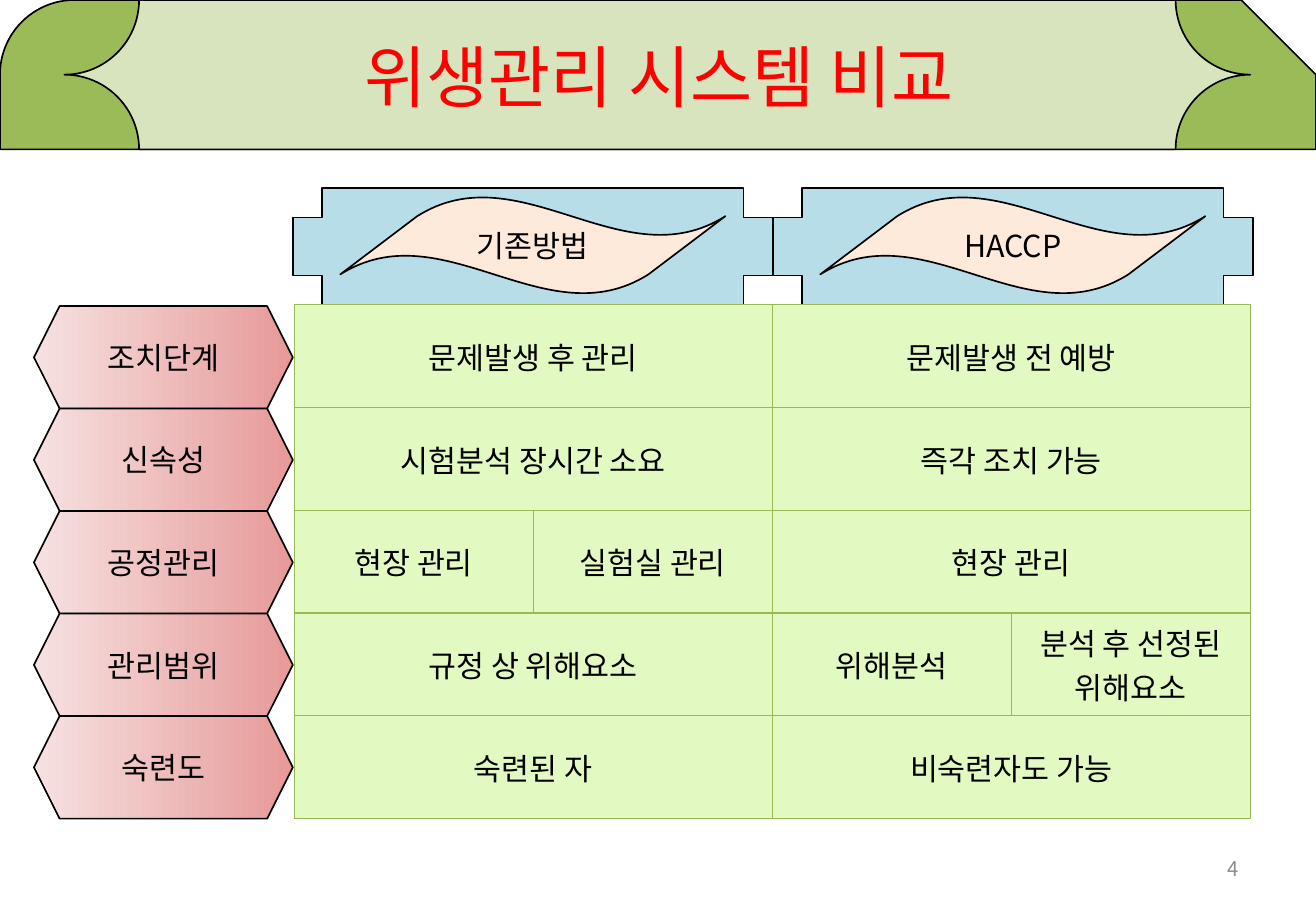
from lxml import etree
from pptx import Presentation
from pptx.dml.color import RGBColor
from pptx.enum import shapes, text
from pptx.oxml import ns
from pptx.util import Inches, Pt

FONT = "Noto Sans CJK KR"
MSO = shapes.MSO_SHAPE
HEADS = ["기존방법", "HACCP"]
LABELS = ["조치단계", "신속성", "공정관리", "관리범위", "숙련도"]
ROWS = [
    ["문제발생 후 관리", None, "문제발생 전 예방", None],
    ["시험분석 장시간 소요", None, "즉각 조치 가능", None],
    ["현장 관리", "실험실 관리", "현장 관리", None],
    ["규정 상 위해요소", None, "위해분석", "분석 후 선정된 위해요소"],
    ["숙련된 자", None, "비숙련자도 가능", None],
]


def rgb(value):
    """Return the colour for a hex string."""
    return RGBColor.from_string(value)


def write(tf, content, size=18, color="000000", align="CENTER"):
    """Put one formatted, vertically centred paragraph in a text frame."""
    tf.word_wrap = True
    tf.vertical_anchor = text.MSO_ANCHOR.MIDDLE
    p = tf.paragraphs[0]
    p.alignment = getattr(text.PP_ALIGN, align)
    r = p.add_run()
    r.text = content
    r.font.size = Pt(size)
    r.font.color.rgb = rgb(color)
    r.font.name = FONT
    ea = etree.SubElement(r._r.get_or_add_rPr(), ns.qn("a:ea"))
    ea.set("typeface", FONT)


def add_outlined(s, kind, box, fill=None, adj=()):
    """Add a preset shape with a thin black outline."""
    sp = s.shapes.add_shape(kind, *map(Inches, box))
    sp.shadow.inherit = False
    for i, value in enumerate(adj):
        sp.adjustments[i] = value
    sp.line.color.rgb = rgb("000000")
    sp.line.width = Pt(1)
    if fill:
        sp.fill.solid()
        sp.fill.fore_color.rgb = rgb(fill)
    return sp


def add_banner(s, x, y, w, h):
    """Draw the green banner and set the slide title over it."""
    add_outlined(s, MSO.SNIP_ROUND_RECTANGLE, (x, y, w, h), "9BBB59", (0.5, 0.5))
    add_outlined(s, MSO.PLAQUE, (x + 0.53, y, w - 1.07, h), "D7E4BD", (0.5,))
    title = s.shapes.title
    title.left, title.top = Inches(x + 0.55), Inches(y)
    title.width, title.height = Inches(w - 1.08), Inches(h + 0.02)
    write(title.text_frame, "위생관리 시스템 비교", size=40, color="FF0000")
    s.shapes._spTree.append(title._element)


def add_heads(s, x, y, w, h):
    """Draw the column heads side by side in the box."""
    step = w / len(HEADS)
    for i, head in enumerate(HEADS):
        left = x + i * step
        add_outlined(s, MSO.CROSS, (left, y, step, h), "B7DEE8")
        wave = add_outlined(s, MSO.WAVE, (left + 0.39, y + 0.07, 3.17, 0.8),
                            "FDEADA", (0.2, -0.1))
        write(wave.text_frame, head)


def add_borders(cell):
    """Give a table cell thin green borders."""
    tc_pr = cell._tc.get_or_add_tcPr()
    for side in ("lnL", "lnR", "lnT", "lnB"):
        ln = etree.SubElement(tc_pr, ns.qn("a:" + side), w=str(Pt(0.75)))
        fill = etree.SubElement(ln, ns.qn("a:solidFill"))
        etree.SubElement(fill, ns.qn("a:srgbClr"), val="98B955")


def add_comparison(s, x, y, w, h):
    """Build the comparison table, merging each cell with the gap after it."""
    table = s.shapes.add_table(len(ROWS), 4, *map(Inches, (x, y, w, h))).table
    for row, values in enumerate(ROWS):
        table.rows[row].height = Inches(h / len(ROWS))
        for col, value in enumerate(values):
            cell = table.cell(row, col)
            add_borders(cell)
            cell.fill.solid()
            cell.fill.fore_color.rgb = rgb("E2FAC2")
            if value is None:
                table.cell(row, col - 1).merge(cell)
            else:
                write(cell.text_frame, value)
                cell.vertical_anchor = text.MSO_ANCHOR.MIDDLE


def add_labels(s, x, y, w, h):
    """Stack the hexagonal row labels in the box."""
    step = h / len(LABELS)
    for i, label in enumerate(LABELS):
        sp = add_outlined(s, MSO.HEXAGON, (x, y + i * step, w, step))
        sp.fill.gradient()
        sp.fill.gradient_angle = 180
        for stop, color in zip(sp.fill.gradient_stops, ("E79A99", "F6E1E1")):
            stop.color.rgb = rgb(color)
        write(sp.text_frame, label)


def add_number(s, x, y, w, h):
    """Place the slide number."""
    sp = s.shapes.add_textbox(*map(Inches, (x, y, w, h)))
    write(sp.text_frame, "4", size=12, color="8C8C8C", align="RIGHT")


def main():
    """Build the slide and save it."""
    prs = Presentation()
    prs.slide_width, prs.slide_height = Inches(10.83), Inches(7.5)
    s = prs.slides.add_slide(prs.slide_layouts[5])
    add_banner(s, 0, 0, 10.83, 1.23)
    add_heads(s, 2.41, 1.55, 7.9, 0.96)
    add_comparison(s, 2.42, 2.51, 7.87, 4.23)
    add_number(s, 7.76, 6.95, 2.53, 0.4)
    add_labels(s, 0.28, 2.52, 2.13, 4.22)
    prs.save("out.pptx")


if __name__ == "__main__":
    main()
